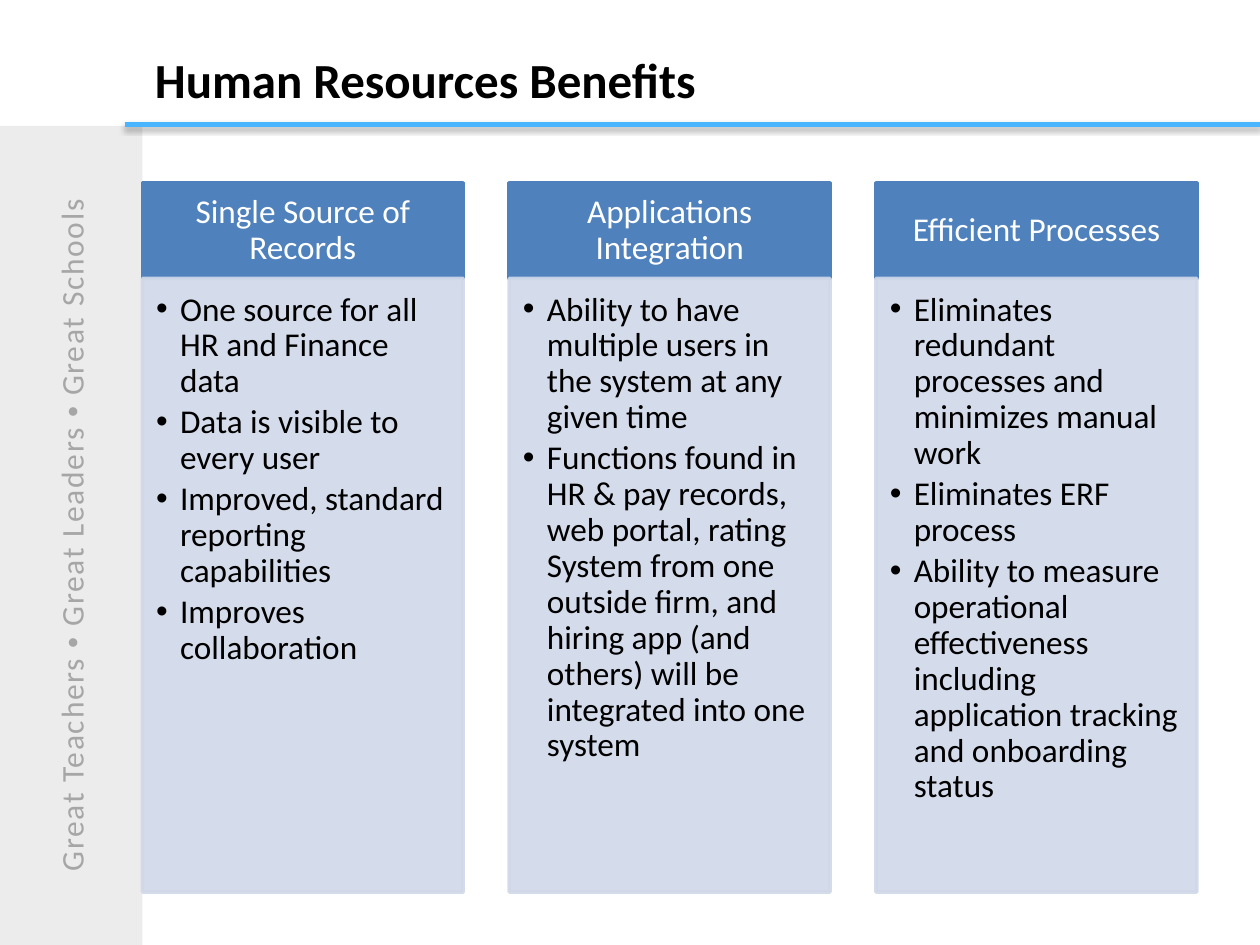
import lxml.etree
import pptx
import pptx.dml.color
import pptx.enum.shapes
import pptx.enum.text
import pptx.oxml.ns
import pptx.util

RGB = pptx.dml.color.RGBColor
BLACK = RGB(0x00, 0x00, 0x00)
WHITE = RGB(0xFF, 0xFF, 0xFF)
BLUE = RGB(0x4F, 0x81, 0xBD)
PALE = RGB(0xD0, 0xD8, 0xE8)
SKY = RGB(0x49, 0xB4, 0xFF)
GREY = RGB(0xD9, 0xD9, 0xD9)
DIM = RGB(0xA6, 0xA6, 0xA6)

WIDE, HIGH = 10, 7.5
LEFT = 1.13  # right edge of the side band, left edge of the columns
RULE = 0.99
SIZE = 19

ALIGN = pptx.enum.text.PP_ALIGN
ANCHOR = pptx.enum.text.MSO_ANCHOR
RECT = pptx.enum.shapes.MSO_SHAPE.RECTANGLE
qn = pptx.oxml.ns.qn
inch = pptx.util.Inches

MOTTO = ["Great Teachers ", "•", " Great Leaders ", "•", " Great Schools"]
COLS = [
    ("Single Source of Records", [
        "One source for all HR and Finance data",
        "Data is visible to every user",
        "Improved, standard reporting capabilities",
        "Improves collaboration"]),
    ("Applications Integration", [
        "Ability to have multiple users in the system at any given time",
        "Functions found in HR & pay records, web portal, rating System from "
        "one outside firm, and hiring app (and others) will be integrated "
        "into one system"]),
    ("Efficient Processes", [
        "Eliminates redundant processes and minimizes manual work",
        "Eliminates ERF process",
        "Ability to measure operational effectiveness including application "
        "tracking and onboarding status"]),
]


def add(node, tag, **attrs):
    """Append an XML child to a node."""
    return lxml.etree.SubElement(node, qn(tag), attrs)


def write(frame, paras, size=SIZE, color=BLACK, bold=False, align=ALIGN.LEFT,
          anchor=ANCHOR.TOP, pad=(0.1, 0.05, 0.1, 0.05), line=None,
          after=None, hang=None, track=None):
    """Fill a frame with paragraphs, each a list of runs."""
    frame.word_wrap = True
    frame.vertical_anchor = anchor
    (frame.margin_left, frame.margin_top,
     frame.margin_right, frame.margin_bottom) = map(inch, pad)
    for num, runs in enumerate(paras):
        para = frame.add_paragraph() if num else frame.paragraphs[0]
        para.alignment = align
        para.line_spacing = line
        if after is not None:
            para.space_after = pptx.util.Pt(after)
        if hang:
            props = para._p.get_or_add_pPr()
            props.set("marL", str(inch(hang)))
            props.set("indent", str(-inch(hang)))
            add(props, "a:buFont", typeface="Arial")
            add(props, "a:buChar", char="•")
        for text in runs:
            run = para.add_run()
            run.text = text
            font = run.font
            font.name = "Arial" if text == "•" else "Calibri"
            font.size = pptx.util.Pt(size)
            font.bold = bold
            font.color.rgb = color
            if track:
                run._r.get_or_add_rPr().set("spc", str(track))


def fade(fill, share):
    """Set the opacity of a solid fill, in percent."""
    tint = fill._xPr.find(qn("a:solidFill"))[0]
    add(tint, "a:alpha", val=str(share * 1000))


def block(slide, box, color, alpha=100, edge=True):
    """Place a plain rectangle."""
    shape = slide.shapes.add_shape(RECT, *map(inch, box))
    shape.shadow.inherit = False
    fills = [shape.fill]
    if edge:
        shape.line.width = pptx.util.Pt(2)
        fills.append(shape.line.fill)
    else:
        shape.line.fill.background()
    for fill in fills:
        fill.solid()
        fill.fore_color.rgb = color
        if alpha < 100:
            fade(fill, alpha)
    return shape


def side(slide, box):
    """Side band with the motto running upwards."""
    frame = block(slide, box, GREY, alpha=49, edge=False).text_frame
    write(frame, [MOTTO], size=18, color=DIM, align=ALIGN.CENTER,
          anchor=ANCHOR.MIDDLE, track=100)
    frame._txBody.bodyPr.set("vert", "vert270")


def head(slide, box):
    """Title with the shadowed rule below it."""
    title = slide.shapes.title
    title.left, title.top, title.width, title.height = map(inch, box)
    write(title.text_frame, [["Human Resources Benefits"]], size=28,
          bold=True, anchor=ANCHOR.MIDDLE)
    rule = slide.shapes.add_connector(
        pptx.enum.shapes.MSO_CONNECTOR.STRAIGHT,
        *map(inch, (RULE, RULE, WIDE, RULE)))
    rule.line.color.rgb = SKY
    rule.line.width = pptx.util.Pt(3)
    effect = add(rule._element.spPr, "a:effectLst")
    shade = add(effect, "a:outerShdw", blurRad=str(pptx.util.Pt(3.1)),
                dist=str(pptx.util.Pt(1.8)), dir="5400000",
                rotWithShape="0")
    add(add(shade, "a:srgbClr", val=str(BLACK)), "a:alpha", val="35000")


def column(slide, box, name, items):
    """Heading block above a list block."""
    left, top, width, height = box
    cap = 0.135 * height
    upper = block(slide, (left, top, width, cap), BLUE)
    lower = block(slide, (left, top + cap, width, height - cap), PALE, 90)
    write(upper.text_frame, [[name]], color=WHITE, align=ALIGN.CENTER,
          anchor=ANCHOR.MIDDLE, pad=(0.15, 0.08, 0.15, 0.08), line=0.9,
          after=0.35 * SIZE)
    write(lower.text_frame, [[item] for item in items],
          pad=(0.11, 0.11, 0.15, 0.17), line=0.9, after=0.15 * SIZE,
          hang=0.19)


def columns(slide, box):
    """Equal columns with gaps of a seventh of a column."""
    left, top, width, height = box
    count = len(COLS)
    each = width / (count + (count - 1) / 7)
    for num, (name, items) in enumerate(COLS):
        spot = left + num * each * 8 / 7
        column(slide, (spot, top, each, height), name, items)


def main():
    deck = pptx.Presentation()
    deck.slide_width, deck.slide_height = inch(WIDE), inch(HIGH)
    slide = deck.slides.add_slide(deck.slide_layouts[5])
    side(slide, (0, 1, LEFT, HIGH - 1))
    head(slide, (LEFT, 0.15, 7.77, 0.95))
    columns(slide, (LEFT, 1.45, 8.37, 5.63))
    deck.save("out.pptx")


if __name__ == "__main__":
    main()
